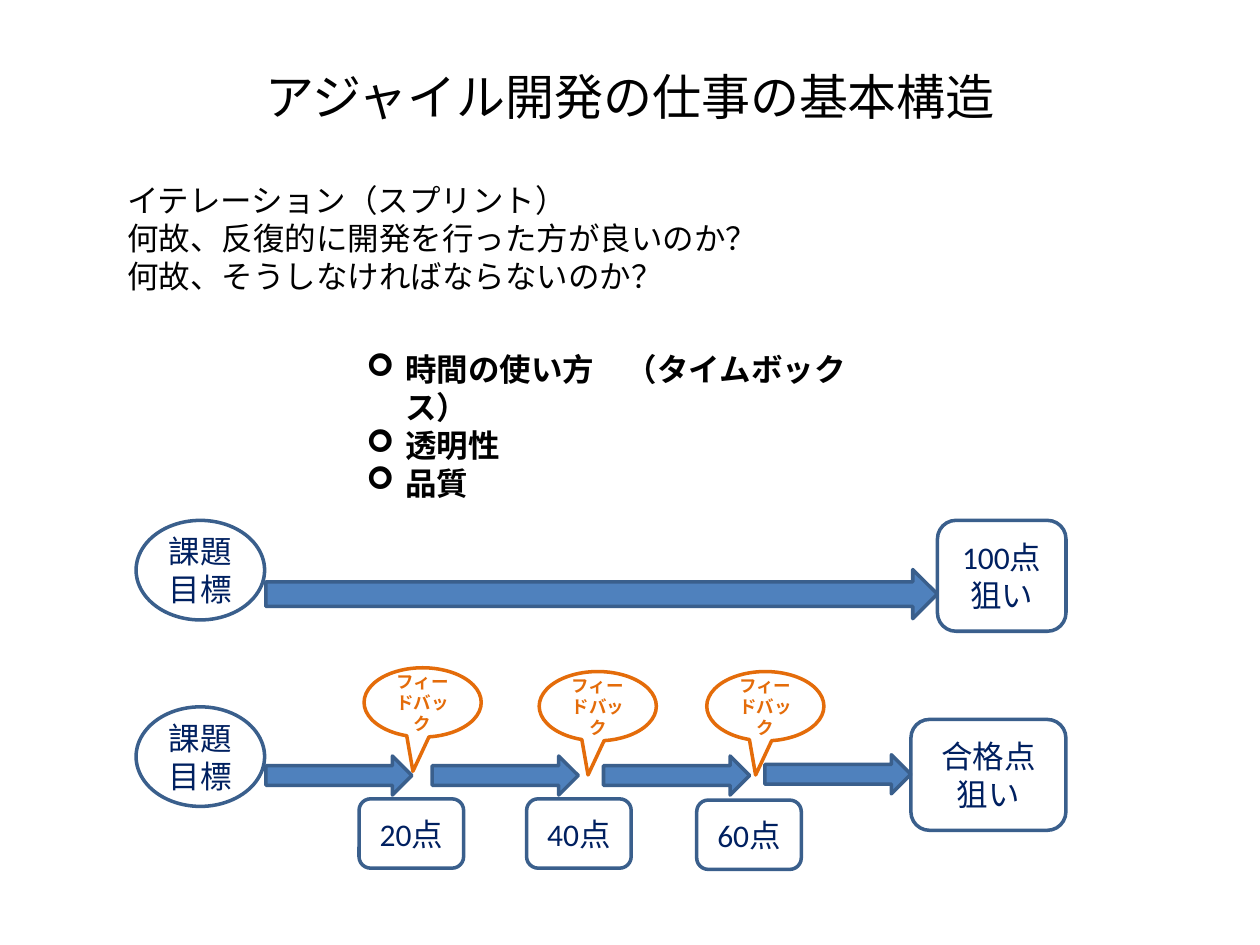
from dataclasses import dataclass

from lxml.etree import SubElement
from pptx import Presentation
from pptx.dml.color import RGBColor
from pptx.enum.shapes import MSO_SHAPE
from pptx.enum.text import MSO_ANCHOR, MSO_AUTO_SIZE, PP_ALIGN
from pptx.oxml.ns import qn
from pptx.util import Inches, Pt

BLACK, NAVY, BLUE, EDGE, ORANGE = "000000", "002060", "4F81BD", "3A5F8C", "E46C0A"


@dataclass
class Node:
    kind: MSO_SHAPE
    left: float
    top: float
    width: float
    height: float
    text: str = ""
    fill: str = ""
    line: str = EDGE
    color: str = NAVY
    size: int = 18
    bold: bool = False


def rgb(color: str) -> RGBColor:
    return RGBColor.from_string(color)


def style_text(frame, size: int, color: str, bold: bool = False, align=PP_ALIGN.LEFT) -> None:
    for para in frame.paragraphs:
        para.alignment = align
        para.font.name = "Calibri"
        para.font.size = Pt(size)
        para.font.bold = bold
        para.font.color.rgb = rgb(color)


def add_text(page, left: float, top: float, width: float, text: str, bold: bool = False):
    box = page.shapes.add_textbox(Inches(left), Inches(top), Inches(width), Inches(1.01))
    frame = box.text_frame
    frame.word_wrap = True
    frame.auto_size = MSO_AUTO_SIZE.SHAPE_TO_FIT_TEXT
    frame.text = text
    style_text(frame, 18, BLACK, bold)
    return frame


def add_bullets(frame, char: str, indent: float) -> None:
    for para in frame.paragraphs:
        props = para._p.get_or_add_pPr()
        props.set("marL", str(Inches(indent)))
        props.set("indent", str(-Inches(indent)))
        SubElement(props, qn("a:buFont"), typeface="Wingdings")
        SubElement(props, qn("a:buChar"), char=char)
        # Paragraph defaults come after the bullet in the schema
        defaults = props.find(qn("a:defRPr"))
        if defaults is not None:
            props.append(defaults)


def add_node(group, node: Node):
    shape = group.shapes.add_shape(
        node.kind, Inches(node.left), Inches(node.top), Inches(node.width), Inches(node.height))
    shape.shadow.inherit = False
    shape.line.color.rgb = rgb(node.line)
    shape.line.width = Pt(2)
    if node.fill:
        shape.fill.solid()
        shape.fill.fore_color.rgb = rgb(node.fill)
    else:
        shape.fill.background()
    if node.text:
        frame = shape.text_frame
        frame.word_wrap = True
        frame.vertical_anchor = MSO_ANCHOR.MIDDLE
        frame.text = node.text
        style_text(frame, node.size, node.color, node.bold, PP_ALIGN.CENTER)
    return shape


def goal(top: float) -> Node:
    return Node(MSO_SHAPE.OVAL, 1.08, top, 1.02, 0.79, "課題目標")


def arrow(left: float, top: float, width: float, height: float) -> Node:
    return Node(MSO_SHAPE.RIGHT_ARROW, left, top, width, height, fill=BLUE)


def card(left: float, top: float, width: float, height: float, text: str) -> Node:
    return Node(MSO_SHAPE.ROUNDED_RECTANGLE, left, top, width, height, text)


def add_feedback(group, left: float, top: float) -> None:
    callout = add_node(group, Node(
        MSO_SHAPE.OVAL_CALLOUT, left, top, 0.93, 0.55, "フィードバック",
        line=ORANGE, color=ORANGE, size=10, bold=True))
    callout.adjustments[0] = -0.083
    callout.adjustments[1] = 0.993


def main() -> None:
    deck = Presentation()
    deck.slide_width, deck.slide_height = Inches(10), Inches(7.5)
    page = deck.slides.add_slide(deck.slide_layouts[5])

    # Title
    title = page.shapes.title
    title.left, title.top = Inches(0.5), Inches(0.3)
    title.width, title.height = Inches(9), Inches(0.93)
    title.text_frame.text = "アジャイル開発の仕事の基本構造"
    title.text_frame.vertical_anchor = MSO_ANCHOR.MIDDLE
    style_text(title.text_frame, 28, BLACK, align=PP_ALIGN.CENTER)

    # Questions and answers
    add_text(page, 0.91, 1.39, 5.75,
             "イテレーション（スプリント）\n"
             "何故、反復的に開発を行った方が良いのか？\n"
             "何故、そうしなければならないのか？")
    answers = add_text(page, 2.81, 2.73, 4.39,
                       "時間の使い方\u3000（タイムボックス）\n透明性\n品質", bold=True)
    add_bullets(answers, "➢", 0.31)

    # One long run towards full marks
    single = page.shapes.add_group_shape()
    for node in (goal(4.13), arrow(2.11, 4.52, 5.33, 0.39),
                 card(7.44, 4.13, 1.02, 0.88, "100点狙い")):
        add_node(single, node)

    # Iterations towards a passing mark
    iterative = page.shapes.add_group_shape()
    add_node(iterative, goal(5.61))
    for left, top in ((2.11, 6), (3.43, 6), (4.79, 6), (6.07, 5.99)):
        add_node(iterative, arrow(left, top, 1.16, 0.31))
    add_node(iterative, card(7.23, 5.71, 1.23, 0.88, "合格点\n狙い"))
    for left, top, score in ((2.85, 6.34, 20), (4.18, 6.34, 40), (5.53, 6.35, 60)):
        add_node(iterative, card(left, top, 0.83, 0.55, f"{score}点"))
    for left, top in ((2.89, 5.3), (4.28, 5.33), (5.61, 5.33)):
        add_feedback(iterative, left, top)

    deck.save("out.pptx")


if __name__ == "__main__":
    main()
